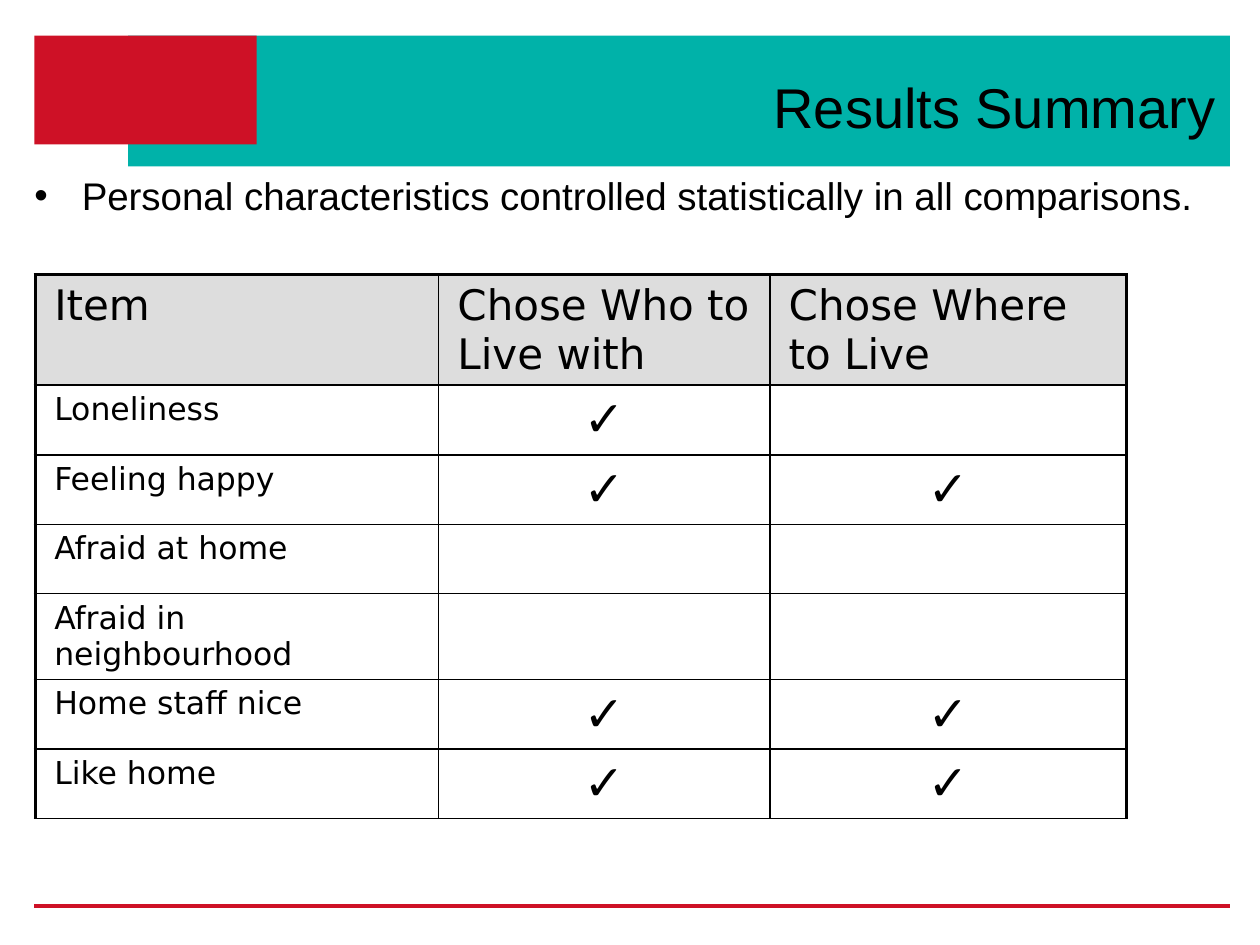
from dataclasses import dataclass

import pptx
import pptx.dml.color
import pptx.enum.shapes
import pptx.enum.text
import pptx.oxml
import pptx.oxml.ns
import pptx.util

Pt = pptx.util.Pt
RGBColor = pptx.dml.color.RGBColor
ALIGN = pptx.enum.text.PP_ALIGN
ANCHOR = pptx.enum.text.MSO_ANCHOR

TEAL = RGBColor(0x00, 0xB2, 0xA9)
RED = RGBColor(0xCE, 0x11, 0x26)
GREY = RGBColor(0xDD, 0xDD, 0xDD)
BLACK = RGBColor(0, 0, 0)

THIN, THICK = 1, 2.25
CHECK = "✓"


@dataclass
class Box:
    left: float
    top: float
    width: float
    height: float

    def lengths(self) -> tuple:
        return Pt(self.left), Pt(self.top), Pt(self.width), Pt(self.height)


@dataclass
class Band:
    box: Box
    color: RGBColor


@dataclass
class Result:
    item: str
    who: bool
    where: bool


BANDS = [
    Band(Box(73.2, 20.4, 629.7, 74.7), TEAL),
    Band(Box(19.7, 20.4, 126.9, 62.2), RED),
]
HEADERS = ["Item", "Chose Who to Live with", "Chose Where to Live"]
RESULTS = [
    Result("Loneliness", True, False),
    Result("Feeling happy", True, True),
    Result("Afraid at home", False, False),
    Result("Afraid in neighbourhood", False, False),
    Result("Home staff nice", True, True),
    Result("Like home", True, True),
]
COLUMN_WIDTHS = [230.4, 189.3, 203.8]
ROW_HEIGHT = 39.6


def add_band(slide, band: Band) -> None:
    sp = slide.shapes.add_shape(
        pptx.enum.shapes.MSO_SHAPE.RECTANGLE, *band.box.lengths())
    sp.shadow.inherit = False
    sp.fill.solid()
    sp.fill.fore_color.rgb = band.color
    sp.line.fill.background()


def add_rule(slide, left: float, right: float, y: float) -> None:
    line = slide.shapes.add_connector(
        pptx.enum.shapes.MSO_CONNECTOR.STRAIGHT, Pt(left), Pt(y), Pt(right), Pt(y))
    line.line.color.rgb = RED
    line.line.width = Pt(THICK)
    pptx.oxml.ns.qn("a:effectLst")
    line._element.spPr.append(pptx.oxml.parse_xml(
        f'<a:effectLst {pptx.oxml.ns.nsdecls("a")}/>'))


def format_text(p, size: float, font: str, align=ALIGN.LEFT) -> None:
    p.alignment = align
    for r in p.runs:
        r.font.size = Pt(size)
        r.font.name = font
        r.font.color.rgb = BLACK


def fill_placeholder(slide, sp, box: Box, text: str, size: float,
                     spacing: float, anchor, align) -> None:
    """Place and format a placeholder, and bring it to the front."""
    sp.left, sp.top, sp.width, sp.height = box.lengths()
    tf = sp.text_frame
    tf.text = text
    tf.word_wrap = True
    tf.auto_size = pptx.enum.text.MSO_AUTO_SIZE.NONE
    tf.vertical_anchor = anchor
    p = tf.paragraphs[0]
    p.line_spacing = Pt(spacing)
    p.space_before = Pt(0)
    format_text(p, size, "Arial", align)
    slide.shapes._spTree.append(sp._element)


def set_borders(cell, widths: dict[str, float]) -> None:
    """Cell borders go before the fill in the cell properties."""
    tc_pr = cell._tc.get_or_add_tcPr()
    for i, (side, width) in enumerate(widths.items()):
        tc_pr.insert(i, pptx.oxml.parse_xml(
            f'<a:ln{side} {pptx.oxml.ns.nsdecls("a")} w="{Pt(width)}">'
            f'<a:solidFill><a:srgbClr val="{BLACK}"/></a:solidFill></a:ln{side}>'))


def add_results_table(slide, left: float, top: float) -> None:
    rows = [HEADERS] + [
        [res.item, CHECK if res.who else "", CHECK if res.where else ""]
        for res in RESULTS]
    box = Box(left, top, sum(COLUMN_WIDTHS), ROW_HEIGHT * len(rows))
    table = slide.shapes.add_table(
        len(rows), len(HEADERS), *box.lengths()).table
    table.first_row = table.horz_banding = False
    for column, width in zip(table.columns, COLUMN_WIDTHS):
        column.width = Pt(width)
    for i, texts in enumerate(rows):
        table.rows[i].height = Pt(ROW_HEIGHT)
        for j, text in enumerate(texts):
            cell = table.cell(i, j)
            cell.text = text
            cell.margin_left = cell.margin_right = Pt(10.8)
            cell.margin_top = cell.margin_bottom = Pt(3.6)
            is_mark = i > 0 and j > 0
            cell.vertical_anchor = ANCHOR.MIDDLE if is_mark else ANCHOR.TOP
            size = 24 if i == 0 else 28 if is_mark else 18
            format_text(cell.text_frame.paragraphs[0], size, "DejaVu Sans",
                        ALIGN.CENTER if is_mark else ALIGN.LEFT)
            if i == 0:
                cell.fill.solid()
                cell.fill.fore_color.rgb = GREY
            else:
                cell.fill.background()
            set_borders(cell, {
                "L": THICK if j == 0 else THIN,
                "R": THICK if j == len(HEADERS) - 1 else THIN,
                "T": THICK if i == 0 else THIN,
                "B": THIN,
            })


def main() -> None:
    prs = pptx.Presentation()
    prs.slide_width, prs.slide_height = Pt(720), Pt(540)
    slide = prs.slides.add_slide(prs.slide_layouts[1])
    title, body = slide.placeholders

    # Header bands and footer rule
    teal_band, red_band = BANDS
    add_band(slide, teal_band)
    add_rule(slide, 19.7, 703.1, 517.7)
    add_band(slide, red_band)

    # Title
    fill_placeholder(slide, title, Box(146.2, 33.8, 555.8, 49.7),
                     "Results Summary", 32, 25, ANCHOR.BOTTOM, ALIGN.RIGHT)

    # Results table
    add_results_table(slide, 20.2, 157)

    # Note under the title, without a bullet, raised by the bottom inset
    p_pr = body.text_frame.paragraphs[0]._p.get_or_add_pPr()
    p_pr.set("marL", "0")
    p_pr.set("indent", "0")
    p_pr.append(pptx.oxml.parse_xml(
        f'<a:buNone {pptx.oxml.ns.nsdecls("a")}/>'))
    fill_placeholder(
        slide, body, Box(19.7, 111.6, 681.8, 26.6),
        "Personal characteristics controlled statistically in all comparisons.",
        22, 18, ANCHOR.MIDDLE, ALIGN.LEFT)
    tf = body.text_frame
    tf.margin_left = tf.margin_top = tf.margin_right = Pt(0)
    tf.margin_bottom = Pt(18)

    prs.save("out.pptx")


if __name__ == "__main__":
    main()
